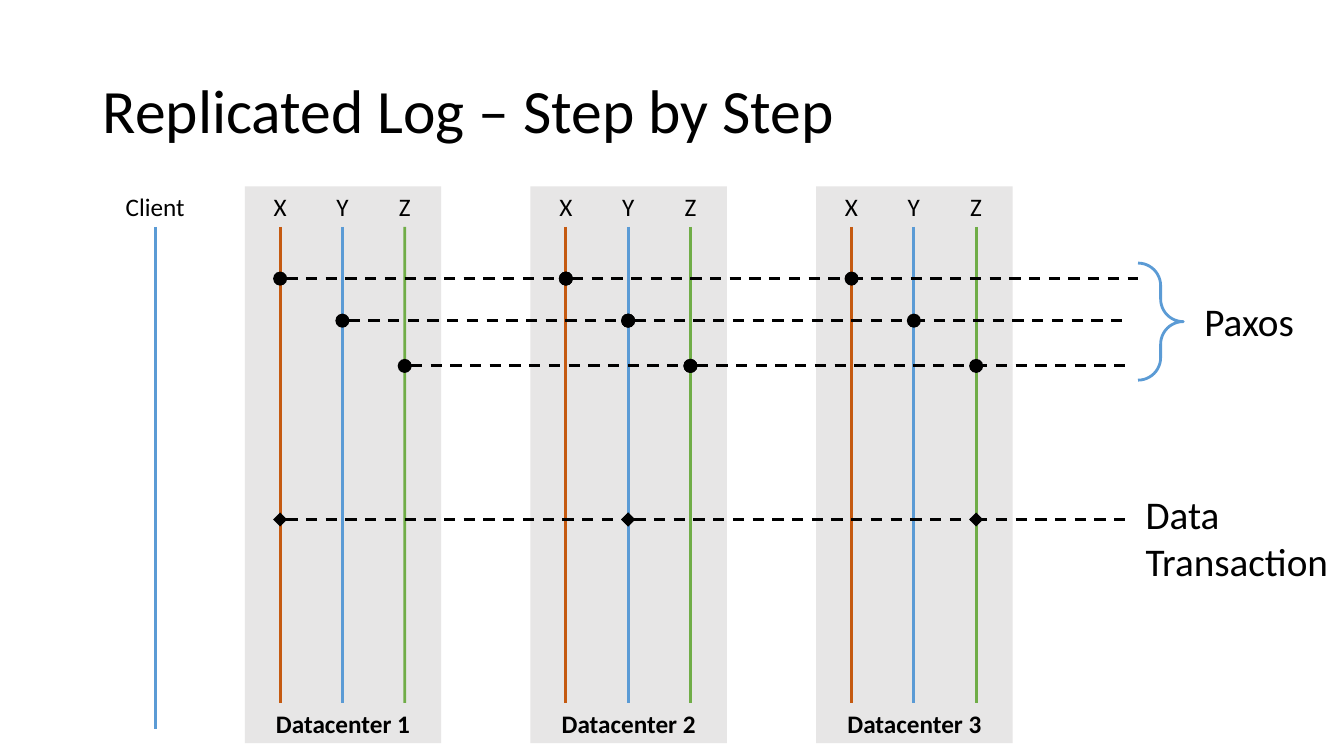
from itertools import pairwise

from lxml.etree import SubElement
from pptx import Presentation
from pptx.dml.color import RGBColor
from pptx.enum.dml import MSO_LINE
from pptx.enum.shapes import MSO_CONNECTOR, MSO_SHAPE
from pptx.enum.text import MSO_ANCHOR, MSO_AUTO_SIZE, PP_ALIGN
from pptx.oxml.ns import qn
from pptx.util import Cm, Pt

BLACK = RGBColor(0x00, 0x00, 0x00)
GRAY = RGBColor(0xE7, 0xE6, 0xE6)
ORANGE = RGBColor(0xC5, 0x5A, 0x11)
BLUE = RGBColor(0x5B, 0x9B, 0xD5)
GREEN = RGBColor(0x70, 0xAD, 0x47)

LANES = (("X", ORANGE), ("Y", BLUE), ("Z", GREEN))
LANE_OFFSET, LANE_PITCH = 0.89, 1.57
LABEL_H = 1.02
DC_LEFT, DC_TOP, DC_W, DC_H, DC_PITCH = 6.17, 4.7, 4.95, 14.03, 7.2
DC_COUNT = 3
# Row height, right end, and the lane used in each datacenter
PAXOS_ROWS = ((7.02, 28.68, (0, 0, 0)),
              (8.08, 28.37, (1, 1, 1)),
              (9.22, 28.37, (2, 2, 2)))
DATA_ROW = (13.09, 28.37, (0, 1, 2))


def style_text(tf, size, align=PP_ALIGN.LEFT, bold=False):
    for p in tf.paragraphs:
        p.alignment = align
        for r in p.runs:
            r.font.name = "Calibri"
            r.font.size = Pt(size)
            r.font.bold = bold
            r.font.color.rgb = BLACK


def add_label(shapes, text, x, y, w, h, size, align=PP_ALIGN.LEFT):
    s = shapes.add_textbox(Cm(x), Cm(y), Cm(w), Cm(h))
    tf = s.text_frame
    tf.text = text
    tf.word_wrap = False
    tf.auto_size = MSO_AUTO_SIZE.SHAPE_TO_FIT_TEXT
    style_text(tf, size, align)
    return s


def add_line(shapes, x1, y1, x2, y2, color):
    s = shapes.add_connector(MSO_CONNECTOR.STRAIGHT,
                             Cm(x1), Cm(y1), Cm(x2), Cm(y2))
    s.line.color.rgb = color
    s.line.width = Pt(2)
    SubElement(s._element.spPr, qn("a:effectLst"))
    return s


def add_dashes(shapes, x1, x2, y, marker=None):
    """Draw a level dashed line, with a large marker at both ends if given."""
    s = add_line(shapes, x1, y, x2, y, BLACK)
    s.line.dash_style = MSO_LINE.DASH
    if marker:
        for end in ("a:headEnd", "a:tailEnd"):
            SubElement(s.line._ln, qn(end), type=marker, w="lg", len="lg")


def add_lifeline(shapes, text, x, top, bottom, w, color):
    """Draw a label centred on x and a line from it down to bottom."""
    label = add_label(shapes, text, x - w / 2, top, w, LABEL_H, 18,
                      PP_ALIGN.CENTER)
    line = add_line(shapes, x, top + LABEL_H, x, bottom, color)
    line.begin_connect(label, 2)


def add_title(slide, x, y, w, h):
    s = slide.shapes.add_textbox(Cm(x), Cm(y), Cm(w), Cm(h))
    tf = s.text_frame
    tf.text = "Replicated Log – Step by Step"
    tf.word_wrap = True
    tf.vertical_anchor = MSO_ANCHOR.MIDDLE
    tf.paragraphs[0].line_spacing = 0.9
    style_text(tf, 44)


def add_datacenter(slide, name, x, y, w, h):
    shapes = slide.shapes.add_group_shape().shapes
    s = shapes.add_shape(MSO_SHAPE.RECTANGLE, Cm(x), Cm(y), Cm(w), Cm(h))
    s.shadow.inherit = False
    s.fill.solid()
    s.fill.fore_color.rgb = GRAY
    s.line.fill.background()
    tf = s.text_frame
    tf.text = name
    tf.vertical_anchor = MSO_ANCHOR.BOTTOM
    style_text(tf, 18, PP_ALIGN.CENTER, bold=True)
    for i, (lane, color) in enumerate(LANES):
        add_lifeline(shapes, lane, x + LANE_OFFSET + i * LANE_PITCH,
                     y, y + h - LABEL_H, 0.84, color)


def add_log_row(slide, y, right, lanes, marker):
    """Join one lane of each datacenter and run on to the right end."""
    xs = [DC_LEFT + i * DC_PITCH + LANE_OFFSET + lane * LANE_PITCH
          for i, lane in enumerate(lanes)]
    for x1, x2 in pairwise(xs):
        add_dashes(slide.shapes, x1, x2, y, marker)
    add_dashes(slide.shapes, xs[-1], right, y)


def add_paxos(slide, x, y, w, h):
    for row in PAXOS_ROWS:
        add_log_row(slide, *row, "oval")
    s = slide.shapes.add_shape(MSO_SHAPE.RIGHT_BRACE,
                               Cm(x), Cm(y), Cm(w), Cm(h))
    s.shadow.inherit = False
    s.adjustments[0] = 0.5
    s.fill.background()
    s.line.color.rgb = BLUE
    s.line.width = Pt(2)
    add_label(slide.shapes, "Paxos", x + w + 0.28, y + 0.74, 2.79, 1.45, 28)


def add_data_transaction(slide, x, y, w, h):
    add_log_row(slide, *DATA_ROW, "diamond")
    add_label(slide.shapes, "Data\nTransaction", x, y, w, h, 28)


def main():
    prs = Presentation()
    prs.slide_width, prs.slide_height = Cm(33.87), Cm(19.05)
    slide = prs.slides.add_slide(prs.slide_layouts[6])
    add_title(slide, 2.34, 1.02, 29.21, 3.68)
    add_lifeline(slide.shapes, "Client", 3.91, DC_TOP, 18.36, 2.0, BLUE)
    for i in range(DC_COUNT):
        add_datacenter(slide, f"Datacenter {i + 1}", DC_LEFT + i * DC_PITCH,
                       DC_TOP, DC_W, DC_H)
    add_paxos(slide, 28.68, 6.63, 1.14, 2.95)
    add_data_transaction(slide, 28.62, 12.24, 5.16, 2.64)
    prs.save("out.pptx")


if __name__ == "__main__":
    main()
